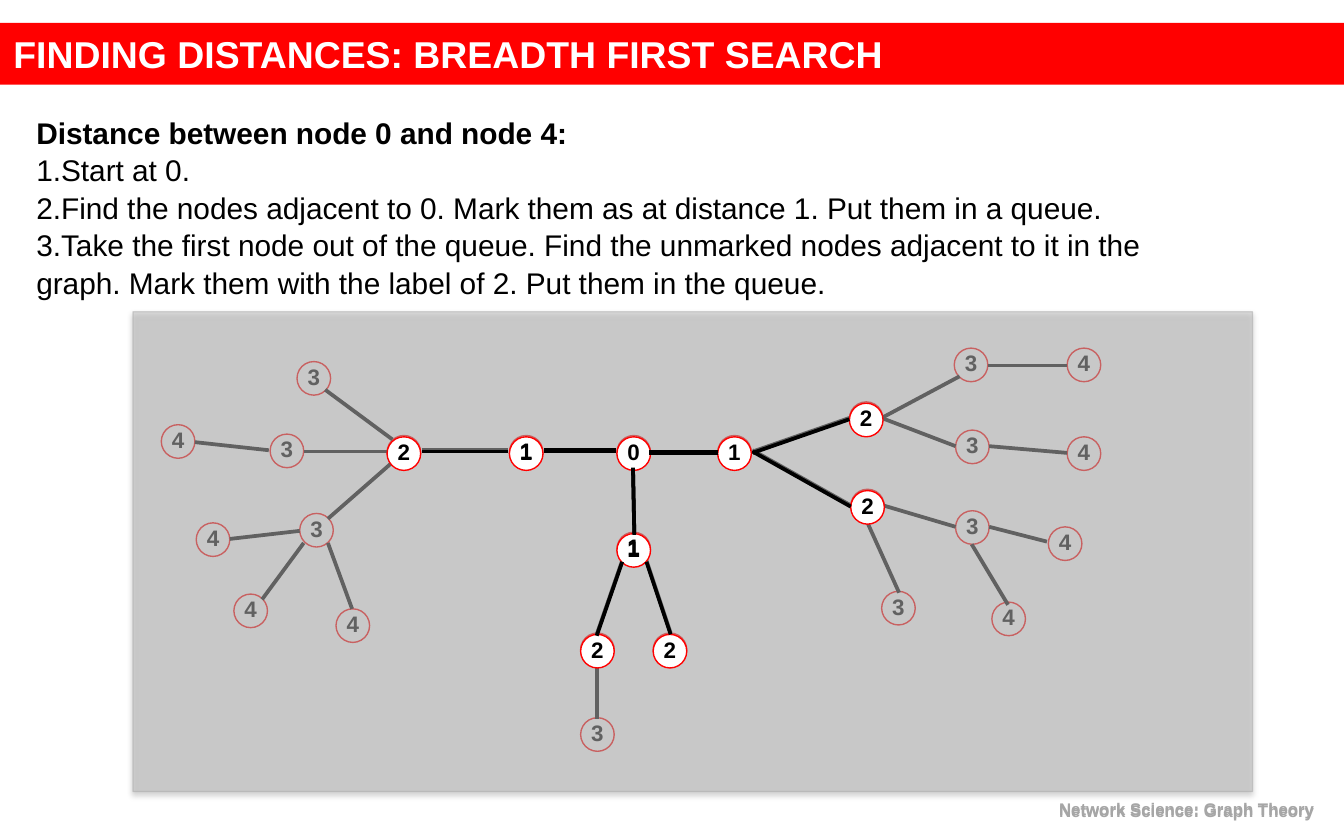
from lxml import etree
from pptx import Presentation
from pptx.dml.color import RGBColor
from pptx.enum import shapes, text
from pptx.oxml import parse_xml
from pptx.oxml.ns import nsdecls, qn
from pptx.util import Emu, Inches, Pt

BLACK = RGBColor(0, 0, 0)
WHITE = RGBColor(255, 255, 255)
RED = RGBColor(255, 0, 0)
VEIL_GREY = RGBColor(0xBF, 0xBF, 0xBF)
FOOTER_GREY = RGBColor(0xA6, 0xA6, 0xA6)

COLUMNS, ROWS = 1000, 625  # every position below is a grid column or row
NODE_SIZE = 25
BACK_SHIFT = -1  # the full graph sits one row above the highlighted part

HEADING = "Distance between node 0 and node 4:"
STEPS = [
    "Start at 0.",
    "Find the nodes adjacent to 0. Mark them as at distance 1. Put them in a queue.",
    "Take the first node out of the queue. Find the unmarked nodes adjacent to it "
    "in the graph. Mark them with the label of 2. Put them in the queue.",
]

# Nodes: (distance, column, row) of the top left corner
START_NODES = [(0, 459, 325), (1, 534, 325)]
EMPHASISED_NODES = [(1, 379, 325), (1, 459, 397)]
SECOND_NODES = [(2, 632, 300), (2, 633, 365), (2, 486, 472), (2, 432, 472), (2, 288, 325)]
OUTER_NODES = [
    (3, 710, 259), (3, 711, 320), (3, 711, 380), (3, 656, 440),
    (3, 221, 269), (3, 201, 323), (3, 223, 382), (3, 432, 534),
    (4, 250, 453), (4, 174, 442), (4, 146, 389), (4, 120, 316),
    (4, 780, 392), (4, 738, 448), (4, 794, 325), (4, 794, 259),
]

# Edges: (column, row) to (column, row)
START_EDGES = [(405, 336, 458, 336), (483, 337, 534, 337), (471, 349, 472, 398)]
SECOND_EDGES = [
    (314, 336, 378, 336), (463, 418, 444, 473), (481, 418, 499, 472),
    (633, 377, 560, 336), (632, 312, 560, 337),
]
OUTER_EDGES = [
    (242, 290, 292, 327), (292, 344, 244, 386), (226, 336, 288, 336),
    (656, 311, 711, 332), (656, 311, 714, 280), (657, 376, 711, 392),
    (645, 388, 669, 441), (444, 495, 444, 535), (226, 404, 195, 446),
    (244, 404, 262, 453), (171, 401, 223, 395), (145, 329, 200, 335),
    (736, 392, 779, 403), (723, 405, 750, 450), (794, 337, 736, 332),
    (794, 272, 735, 272),
]


class GraphSlide:
    """Style of the deck and the slide being filled."""

    font = "Arial"
    edge_width = Pt(2)
    ring_width = Pt(0.75)

    def __init__(self, deck):
        self.col, self.row = deck.slide_width / COLUMNS, deck.slide_height / ROWS
        self.slide = deck.slides.add_slide(deck.slide_layouts[1])
        self.layer = self.slide.shapes

    def cells(self, left, top, width, height):
        return (Emu(round(left * self.col)), Emu(round(top * self.row)),
                Emu(round(width * self.col)), Emu(round(height * self.row)))

    def place(self, shape, *area):
        shape.left, shape.top, shape.width, shape.height = self.cells(*area)

    def add_words(self, paragraph, words, size, color, bold=False):
        run = paragraph.add_run()
        run.text = words
        font = run.font
        font.name, font.size, font.bold = self.font, Pt(size), bold
        font.color.rgb = color

    def title(self, words, *area):
        banner = self.slide.shapes.title
        self.place(banner, *area)
        banner.fill.solid()
        banner.fill.fore_color.rgb = RED
        frame = banner.text_frame
        frame.auto_size = text.MSO_AUTO_SIZE.NONE
        frame.vertical_anchor = text.MSO_ANCHOR.MIDDLE
        frame.paragraphs[0].alignment = text.PP_ALIGN.LEFT
        self.add_words(frame.paragraphs[0], words, 20, WHITE, bold=True)

    def steps(self, heading, items, *area):
        body = self.slide.placeholders[1]
        self.place(body, *area)
        frame = body.text_frame
        frame.auto_size = text.MSO_AUTO_SIZE.NONE
        for index, words in enumerate([heading] + items):
            paragraph = frame.add_paragraph() if index else frame.paragraphs[0]
            paragraph.space_before = Pt(0)
            paragraph.line_spacing = 1.05 if index else 1.6
            self.add_words(paragraph, words, 16, BLACK, bold=index == 0)
            properties = paragraph._p.get_or_add_pPr()
            properties.set("marL", "0")
            properties.set("indent", "0")
            if index:
                etree.SubElement(properties, qn("a:buAutoNum"), type="arabicPeriod")
            else:
                etree.SubElement(properties, qn("a:buNone"))

    def label(self, words, *area, size=12, color=BLACK, align=text.PP_ALIGN.CENTER, inset=0):
        box = self.layer.add_textbox(*self.cells(*area))
        frame = box.text_frame
        frame.word_wrap = True
        frame.margin_left = frame.margin_right = Inches(inset)
        frame.margin_top = frame.margin_bottom = Inches(inset / 2)
        frame.paragraphs[0].alignment = align
        self.add_words(frame.paragraphs[0], words, size, color, bold=True)

    def ring(self, column, row):
        circle = self.layer.add_shape(shapes.MSO_SHAPE.OVAL,
                                      *self.cells(column, row, NODE_SIZE, NODE_SIZE))
        circle.shadow.inherit = False
        circle.fill.solid()
        circle.fill.fore_color.rgb = WHITE
        circle.line.color.rgb = RED
        circle.line.width = self.ring_width

    def distance(self, value, column, row):
        self.label(str(value), column - 1, row + 1, NODE_SIZE + 2, 20)

    def nodes(self, places, shift=0, labelled=True):
        for value, column, row in places:
            self.ring(column, row + shift)
            if labelled:
                self.distance(value, column, row + shift)

    def edges(self, ends, shift=0):
        for x1, y1, x2, y2 in ends:
            edge = self.layer.add_connector(
                shapes.MSO_CONNECTOR.STRAIGHT,
                *self.cells(x1, y1 + shift, x2, y2 + shift))
            edge.line.color.rgb = BLACK
            edge.line.width = self.edge_width
            etree.SubElement(edge._element.spPr, qn("a:effectLst"))

    def veil(self, *area):
        """Half-transparent panel that fades the nodes not reached yet."""
        panel = self.layer.add_shape(shapes.MSO_SHAPE.RECTANGLE, *self.cells(*area))
        panel.fill.solid()
        panel.fill.fore_color.rgb = VEIL_GREY
        panel.line.color.rgb = FOOTER_GREY
        panel.line.width = self.ring_width
        panel.shadow.inherit = False
        properties = panel._element.spPr
        for color, percent in zip(properties.iter(qn("a:srgbClr")), (51, 48)):
            etree.SubElement(color, qn("a:alpha"), val=str(percent * 1000))
        properties.find(qn("a:effectLst")).append(parse_xml(
            f'<a:outerShdw {nsdecls("a")} blurRad="{Pt(3.1)}" dist="{Pt(1.8)}" '
            'dir="5400000" rotWithShape="0"><a:srgbClr val="000000">'
            '<a:alpha val="35000"/></a:srgbClr></a:outerShdw>'))


def main():
    deck = Presentation()
    deck.slide_width, deck.slide_height = Inches(10), Inches(6.25)
    page = GraphSlide(deck)
    page.title("FINDING DISTANCES: BREADTH FIRST SEARCH", 0, 17, COLUMNS, 46)
    page.steps(HEADING, STEPS, 17, 64, 883, 161)

    page.layer = page.slide.shapes.add_group_shape().shapes
    page.nodes(START_NODES, BACK_SHIFT)
    page.nodes(EMPHASISED_NODES, BACK_SHIFT, labelled=False)
    page.nodes(SECOND_NODES, BACK_SHIFT)
    page.edges(SECOND_EDGES, BACK_SHIFT)
    page.nodes(OUTER_NODES)
    page.edges(OUTER_EDGES)

    page.layer = page.slide.shapes
    page.veil(99, 232, 833, 357)
    page.nodes(START_NODES + EMPHASISED_NODES)
    page.edges(START_EDGES)
    page.nodes(SECOND_NODES)
    page.edges(SECOND_EDGES)
    for row in (591, 589):
        page.label("Network Science: Graph Theory ", 708, row, 283, 25, size=9,
                   color=FOOTER_GREY, align=text.PP_ALIGN.RIGHT, inset=0.1)
    for value, column, row in EMPHASISED_NODES:
        page.distance(value, column, row + BACK_SHIFT)
    page.edges(START_EDGES, BACK_SHIFT)
    deck.save("out.pptx")


if __name__ == "__main__":
    main()
